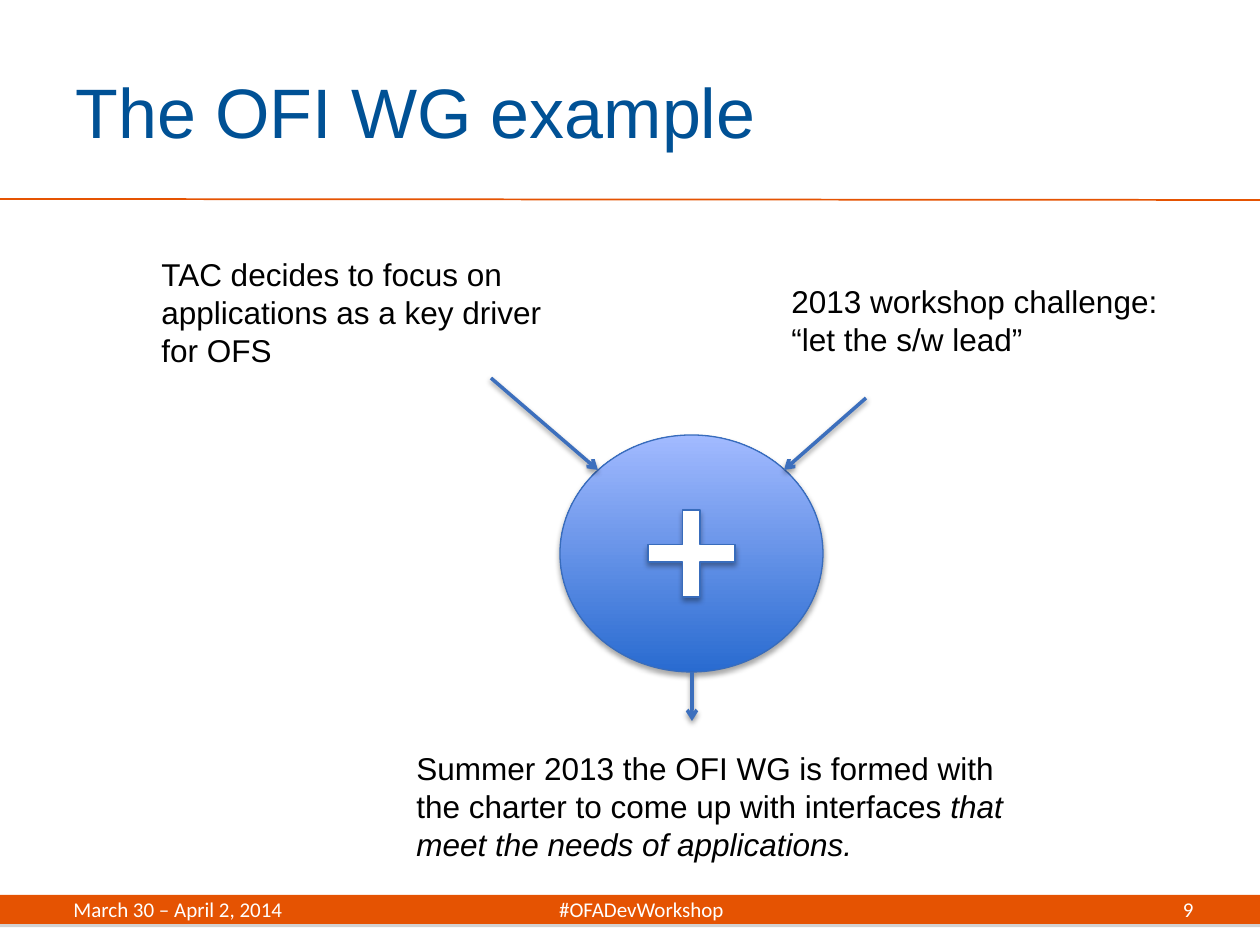
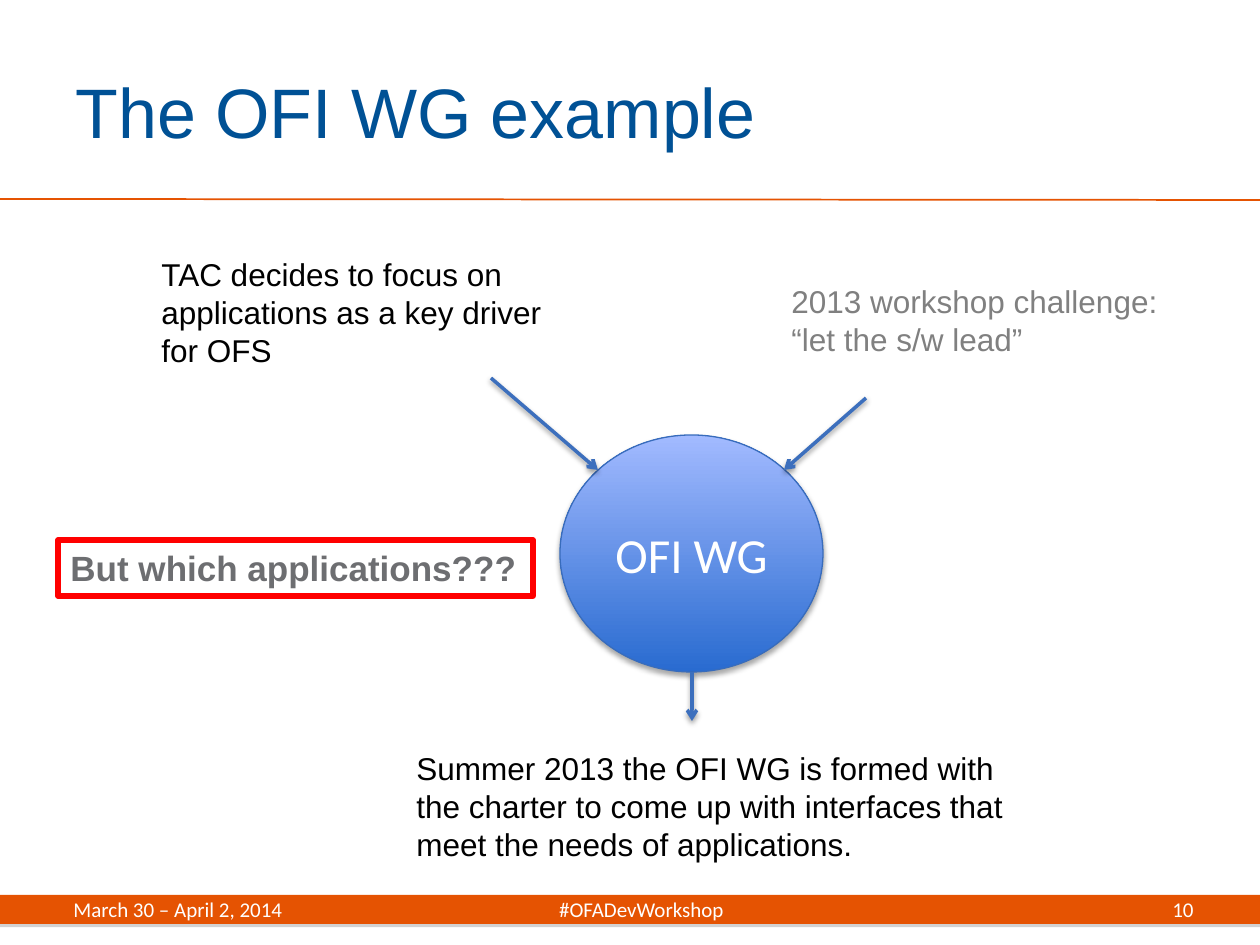
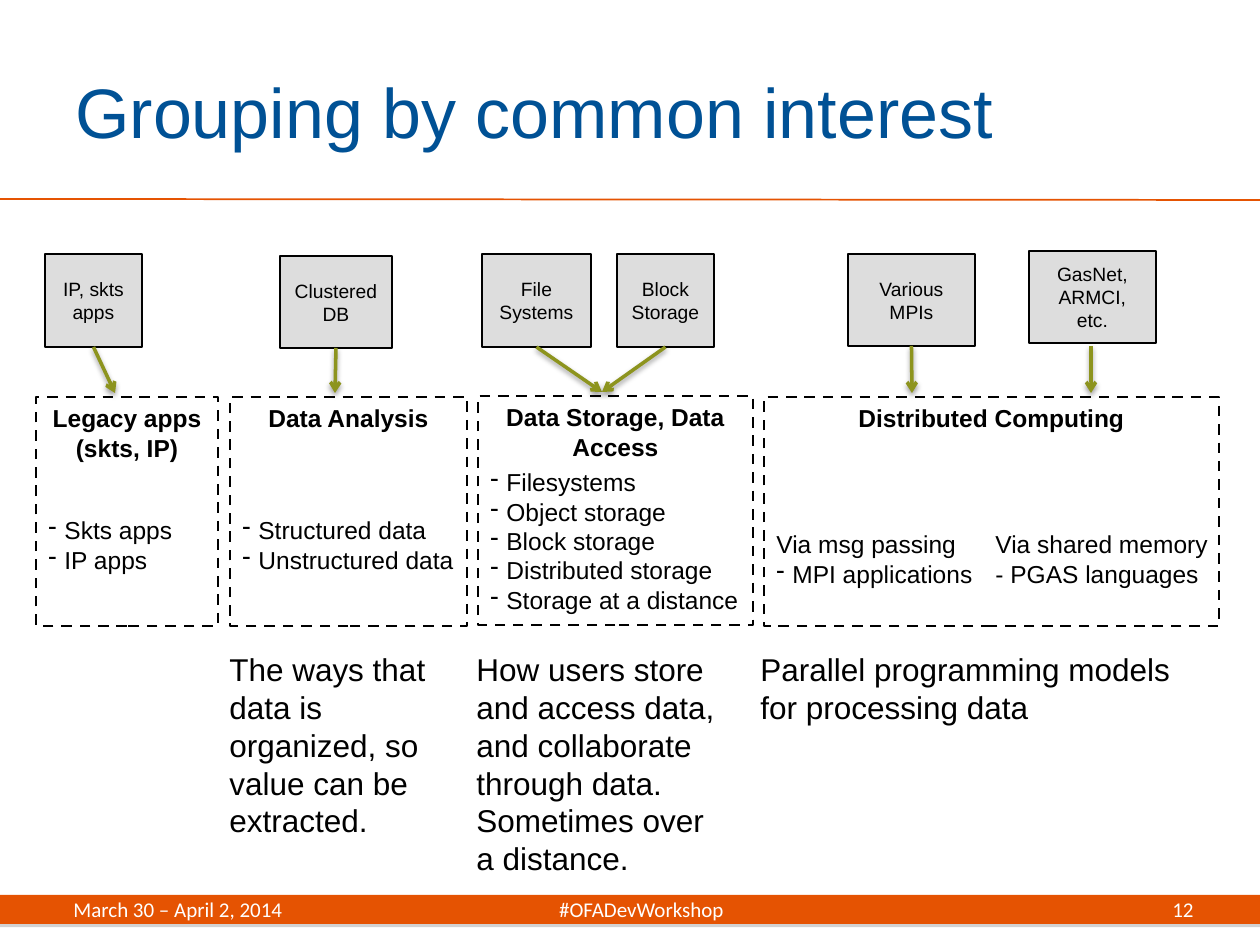
from lxml import etree
from pptx import Presentation
from pptx.dml.color import RGBColor
from pptx.enum.dml import MSO_LINE
from pptx.enum.shapes import MSO_CONNECTOR, MSO_SHAPE
from pptx.enum.text import MSO_ANCHOR, PP_ALIGN
from pptx.oxml.ns import qn
from pptx.util import Emu, Pt

RECT, OVAL, CROSS = MSO_SHAPE.RECTANGLE, MSO_SHAPE.OVAL, MSO_SHAPE.CROSS
STRAIGHT, DASH = MSO_CONNECTOR.STRAIGHT, MSO_LINE.DASH
TOP, MIDDLE = MSO_ANCHOR.TOP, MSO_ANCHOR.MIDDLE
LEFT, CENTER, RIGHT = PP_ALIGN.LEFT, PP_ALIGN.CENTER, PP_ALIGN.RIGHT
BOTTOM_SITE = 2

ORANGE, TITLE_BLUE = "E55302", "005195"
BLUE, BLUE_EDGE, DEEP_BLUE, PALE_BLUE = "3C6FBD", "386CBC", "296BD0", "A2BAFF"
OLIVE, RED, BLACK, WHITE = "8D941E", "FF0000", "000000", "FFFFFF"
GRAY, DARK_GRAY, LIGHT_GRAY = "808080", "6D6E71", "DDDDDD"

SHAPE_SHADOW = (BLACK, 35, 3.1, 1.8)
ARROW_SHADOW = (BLACK, 38, 3.1, 1.6)
BAND_SHADOW = (GRAY, 35, 0, 1.8)


def px(n):
    """Turn pixels into EMU."""
    return Emu(round(n * 914400 / 126))


def rgb(value):
    """Turn a hex string into a colour."""
    return RGBColor.from_string(value)


def set_shadow(s, shadow=None):
    """Replace the theme shadow with the given one, or with none."""
    sp_pr = s._element.spPr
    for old in sp_pr.findall(qn("a:effectLst")):
        sp_pr.remove(old)
    effects = etree.SubElement(sp_pr, qn("a:effectLst"))
    if shadow:
        color, opacity, blur, dist = shadow
        outer = etree.SubElement(effects, qn("a:outerShdw"), blurRad=str(Pt(blur)),
                                 dist=str(Pt(dist)), dir="5400000", rotWithShape="0")
        clr = etree.SubElement(outer, qn("a:srgbClr"), val=color)
        etree.SubElement(clr, qn("a:alpha"), val=str(opacity * 1000))


def write(s, lines, size, color=BLACK, font="Arial", bold=False, align=LEFT,
          anchor=TOP, wrap=True, dash_from=None, tab=None):
    """Fill a shape with paragraphs, dash-bulleted from a given index on."""
    tf = s.text_frame
    tf.word_wrap = wrap
    tf.vertical_anchor = anchor
    for i, line in enumerate(lines):
        p = tf.paragraphs[0] if i == 0 else tf.add_paragraph()
        p.text = line
        p.alignment = align
        p_pr = p._p.get_or_add_pPr()
        if dash_from is not None and i >= dash_from:
            p_pr.set("marL", str(px(16)))
            p_pr.set("indent", str(-px(16)))
            etree.SubElement(p_pr, qn("a:buChar"), char="-")
        if tab:
            tabs = etree.SubElement(p_pr, qn("a:tabLst"))
            etree.SubElement(tabs, qn("a:tab"), pos=str(px(tab)), algn="ctr")
        p.font.size = Pt(size)
        p.font.name = font
        p.font.bold = bold
        p.font.color.rgb = rgb(color)


def text(slide, box, lines, size, **style):
    """Add a text box."""
    s = slide.shapes.add_textbox(*map(px, box))
    write(s, lines, size, **style)
    return s


def shape(slide, kind, box, fill=None, line=None, width=0.75, shadow=None):
    """Add a preset shape with an optional fill, outline and shadow."""
    s = slide.shapes.add_shape(kind, *map(px, box))
    if fill:
        s.fill.solid()
        s.fill.fore_color.rgb = rgb(fill)
    else:
        s.fill.background()
    if line:
        s.line.color.rgb = rgb(line)
        s.line.width = Pt(width)
    else:
        s.line.fill.background()
    set_shadow(s, shadow)
    return s


def rule(slide, start, end, color, width, shadow=None):
    """Add a straight line."""
    c = slide.shapes.add_connector(STRAIGHT, *map(px, start + end))
    c.line.color.rgb = rgb(color)
    c.line.width = Pt(width)
    set_shadow(c, shadow)
    return c


def arrow(slide, start, end, color):
    """Add a shadowed line with an open arrowhead at its end."""
    c = rule(slide, start, end, color, 2, ARROW_SHADOW)
    etree.SubElement(c.line._get_or_add_ln(), qn("a:tailEnd"), type="arrow")
    return c


def new_slide(prs, title, number):
    """Add a slide with the title, rule and footer band."""
    slide = prs.slides.add_slide(prs.slide_layouts[6])
    shape(slide, RECT, (0, 895, 1260, 29), ORANGE, shadow=BAND_SHADOW)
    rule(slide, (0, 199), (1260, 200), ORANGE, 1)
    text(slide, (63, 32, 1029, 157), [title], 40, color=TITLE_BLUE, anchor=MIDDLE)
    footer = dict(color=WHITE, font="Calibri", anchor=MIDDLE)
    text(slide, (61, 895, 1140, 29), ["March 30 – April 2, 2014\t#OFADevWorkshop"],
         12, tab=568, **footer)
    text(slide, (1056, 895, 150, 29), [str(number)], 12, align=RIGHT, **footer)
    return slide


def ofi_flow(slide, charter, charter_end="", challenge_color=BLACK):
    """Draw two inputs flowing through a disc into the charter; return the disc."""
    disc = shape(slide, OVAL, (560, 435, 263, 237), line=BLUE_EDGE, shadow=SHAPE_SHADOW)
    disc.fill.gradient()
    disc.fill.gradient_angle = 90
    for stop, color in zip(disc.fill.gradient_stops, (DEEP_BLUE, PALE_BLUE)):
        stop.color.rgb = rgb(color)
    for start, end in (((491, 378), (598, 470)), ((866, 398), (784, 470)),
                       ((692, 672), (692, 721))):
        arrow(slide, start, end, BLUE)
    text(slide, (149, 249, 412, 127),
         ["TAC decides to focus on applications as a key driver for OFS"], 18)
    text(slide, (779, 276, 394, 89),
         ["2013 workshop challenge: “let the s/w lead”"], 18, color=challenge_color)
    s = text(slide, (404, 743, 646, 127), [charter], 18)
    if charter_end:
        r = s.text_frame.paragraphs[0].add_run()
        r.text = charter_end
        r.font.italic = True
    return disc


def app_box(slide, box, lines, tip=None):
    """Add an application box, with an arrow from its bottom to a tip."""
    s = shape(slide, RECT, box, LIGHT_GRAY, BLACK)
    write(s, lines, 11, align=CENTER, anchor=MIDDLE)
    if tip:
        arrow(slide, tip, tip, OLIVE).begin_connect(s, BOTTOM_SITE)


def group_box(slide, box, title):
    """Add a dashed, titled group frame."""
    s = shape(slide, RECT, box, line=BLACK, width=1.5)
    s.line.dash_style = DASH
    write(s, [title], 14, bold=True, align=CENTER)


def plus_slide(prs):
    """Build the slide where two inputs add up."""
    slide = new_slide(prs, "The OFI WG example", 9)
    ofi_flow(slide, "Summer 2013 the OFI WG is formed with the charter to come up "
             "with interfaces ", "that meet the needs of applications.")
    plus = shape(slide, CROSS, (648, 510, 87, 87), WHITE, BLUE_EDGE, shadow=SHAPE_SHADOW)
    plus.adjustments[0] = 0.4


def question_slide(prs):
    """Build the slide that asks which applications matter."""
    slide = new_slide(prs, "The OFI WG example", 10)
    disc = ofi_flow(slide, "Summer 2013 the OFI WG is formed with the charter to come up "
                    "with interfaces that meet the needs of applications.",
                    challenge_color=GRAY)
    write(disc, ["OFI WG"], 28, color=WHITE, font="Calibri", align=CENTER, anchor=MIDDLE)
    question = shape(slide, RECT, (58, 540, 475, 56), line=RED, width=3)
    write(question, ["But which applications???"], 20, color=DARK_GRAY, bold=True, wrap=False)


def grouping_slide(prs):
    """Build the slide that groups applications by interest."""
    slide = new_slide(prs, "Grouping by common interest", 12)
    for x, w, h, summary in (
            (217, 237, 204, "The ways that data is organized, so value can be extracted."),
            (464, 275, 242, "How users store and access data, and collaborate through data. "
                            "Sometimes over a distance."),
            (748, 457, 89, "Parallel programming models for processing data")):
        text(slide, (x, 644, w, h), [summary], 18)

    for box, lines, tip in (
            ((280, 256, 112, 92), ["Clustered", "DB"], (335, 393)),
            ((848, 254, 127, 92), ["Various", "MPIs"], (912, 393)),
            ((482, 254, 109, 93), ["File", "Systems"], (602, 392)),
            ((617, 254, 97, 93), ["Block", "Storage"], (602, 392)),
            ((45, 254, 97, 93), ["IP, skts apps"], (115, 393)),
            ((1029, 251, 127, 92), ["GasNet,\vARMCI,\vetc."], None)):
        app_box(slide, box, lines, tip)
    arrow(slide, (1091, 346), (1091, 393), OLIVE)

    for x, y, w, title in ((36, 397, 182, "Legacy apps (skts, IP)"),
                           (230, 397, 237, "Data Analysis"),
                           (478, 396, 275, "Data Storage, Data Access"),
                           (764, 397, 455, "Distributed Computing")):
        group_box(slide, (x, y, w, 229), title)

    for box, lines, dash_from in (
            ((478, 461, 275, 161), ["Filesystems", "Object storage", "Block storage",
                                    "Distributed storage", "Storage at a distance"], 0),
            ((764, 523, 226, 72), ["Via msg passing", "MPI applications"], 1),
            ((230, 509, 237, 102), ["Structured data", "Unstructured data"], 0),
            ((36, 509, 182, 72), ["Skts apps", "IP apps"], 0),
            ((983, 523, 249, 72), ["Via shared memory", "- PGAS languages"], None)):
        text(slide, box, lines, 14, dash_from=dash_from)


def main():
    """Build and save the presentation."""
    prs = Presentation()
    prs.slide_width, prs.slide_height = px(1260), px(945)
    plus_slide(prs)
    question_slide(prs)
    grouping_slide(prs)
    prs.save("out.pptx")


if __name__ == "__main__":
    main()
